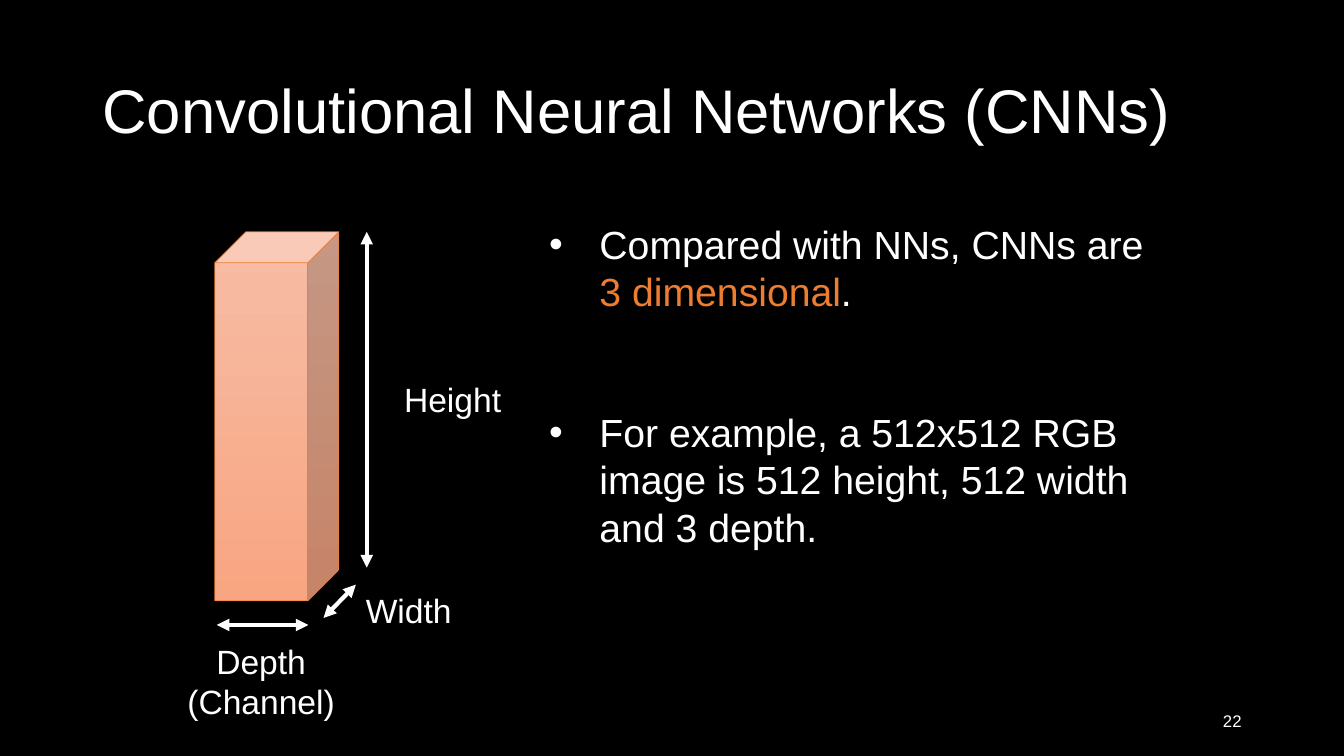
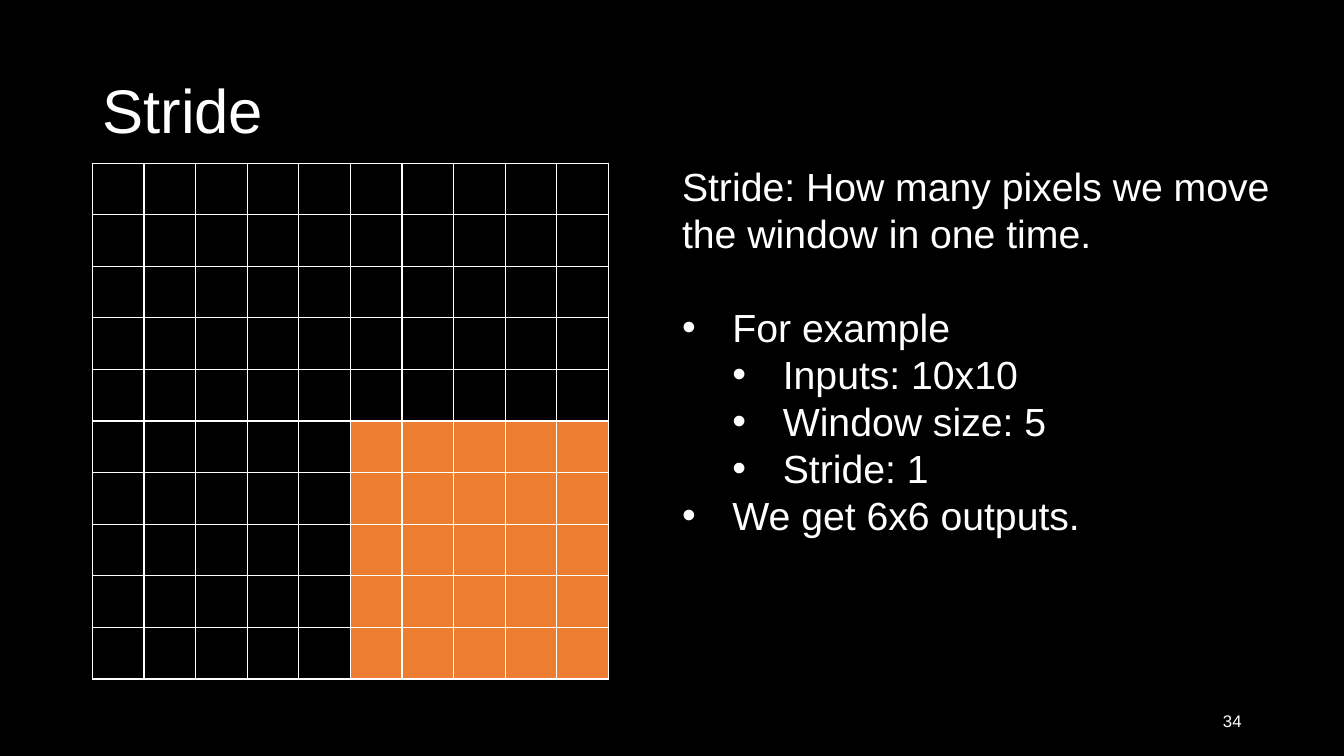
import lxml.etree
import pptx
import pptx.dml.color
import pptx.enum.shapes
import pptx.enum.text
import pptx.oxml.ns
import pptx.util

Pt = pptx.util.Pt
RGB = pptx.dml.color.RGBColor.from_string
ALIGN = pptx.enum.text.PP_ALIGN
MIDDLE = pptx.enum.text.MSO_ANCHOR.MIDDLE
qn = pptx.oxml.ns.qn
add = lxml.etree.SubElement

FONT = "Arial"
HUES = {
    "back": "000000",
    "text": "FFFFFF",
    "accent": "ED7D31",
    "top": "F7BDA5",
    "base": "F8A582",
}
INDENT = 36


def style(frame, size, align=ALIGN.LEFT):
    for par in frame.paragraphs:
        par.alignment = align
        par.line_spacing = Pt(size * 1.2)
        for run in par.runs:
            run.font.name = FONT
            run.font.size = Pt(size)
            run.font.color.rgb = RGB(HUES["text"])


def label(slide, text, box, size, align=ALIGN.LEFT):
    frame = slide.shapes.add_textbox(*map(Pt, box)).text_frame
    frame.word_wrap = False
    frame.text = text
    style(frame, size, align)
    return frame


# Shared look
deck = pptx.Presentation()
deck.slide_width, deck.slide_height = Pt(960), Pt(540)
master = deck.slide_master
master.background.fill.solid()
master.background.fill.fore_color.rgb = RGB(HUES["back"])

# Titles, page numbers and lists: each item is text, level, space before
pages = [
    ("Convolutional Neural Networks (CNNs)", "22", (385, 154, 467, 346), [
        ("Compared with NNs, CNNs are\v", 1, 0),
        ("For example, a 512x512 RGB image is 512 height, "
         "512 width and 3 depth.", 1, 67.2),
    ]),
    ("Stride", "34", (480, 112.3, 447, 279), [
        ("Stride: How many pixels we move\vthe window in one time.", 0, 0),
        ("For example", 1, 33.6),
        ("Inputs: 10x10", 2, 0),
        ("Window size: 5", 2, 0),
        ("Stride: 1", 2, 0),
        ("We get 6x6 outputs.", 1, 0),
    ]),
]
for name, number, box, items in pages:
    slide = deck.slides.add_slide(deck.slide_layouts[1])
    title, body = slide.placeholders
    title.left, title.top, title.width, title.height = map(
        Pt, (66, 28.8, 828, 104.4))
    title.text_frame.text = name
    title.text_frame.vertical_anchor = MIDDLE
    style(title.text_frame, 44)
    title.text_frame.paragraphs[0].line_spacing = 0.9

    body.left, body.top, body.width, body.height = map(Pt, box)
    frame = body.text_frame
    frame.auto_size = pptx.enum.text.MSO_AUTO_SIZE.NONE
    frame.text = "\n".join(text for text, level, gap in items)
    style(frame, 28)
    for par, (text, level, gap) in zip(frame.paragraphs, items):
        par.level = max(level - 1, 0)
        par.space_before = Pt(gap)
        props = par._p.get_or_add_pPr()
        props.set("marL", str(Pt(INDENT * level)))
        props.set("indent", str(Pt(-INDENT if level else 0)))
        if level:
            add(props, qn("a:buFont"), typeface=FONT)
            add(props, qn("a:buChar"), char="•")
        else:
            add(props, qn("a:buNone"))

    foot = label(slide, number, (678, 500.4, 216, 28.8), 12, ALIGN.RIGHT)
    foot.word_wrap = True
    foot.vertical_anchor = MIDDLE

first, second = deck.slides

# Accent words in the first list
frame = first.placeholders[1].text_frame
par = frame.paragraphs[0]
for text in ("3 dimensional", "."):
    par.add_run().text = text
style(frame, 28)
par.runs[1].font.color.rgb = RGB(HUES["accent"])

# Cube
cube = first.shapes.add_shape(
    pptx.enum.shapes.MSO_SHAPE.CUBE, *map(Pt, (153.4, 165.6, 88.6, 263.5)))
cube.shadow.inherit = False
cube.fill.gradient()
cube.fill.gradient_angle = 270
for stop, hue, place in zip(cube.fill.gradient_stops, ("top", "base"), (0, 1)):
    stop.color.rgb = RGB(HUES[hue])
    stop.position = place
cube.line.color.rgb = RGB(HUES["accent"])
cube.line.width = Pt(0.5)

# Dimension arrows and their labels
sizes = [
    ("Height", (262, 165.6, 262, 405.4), (281.5, 267, 85, 36), ALIGN.LEFT),
    ("Depth\v(Channel)", (154.8, 446.4, 220.3, 446.4),
     (126, 454.3, 121, 65.5), ALIGN.CENTER),
    ("Width", (231.1, 441.4, 254.2, 417.6), (254.2, 417.6, 76.3, 36),
     ALIGN.LEFT),
]
for text, ends, box, align in sizes:
    arrow = first.shapes.add_connector(
        pptx.enum.shapes.MSO_CONNECTOR.STRAIGHT, *map(Pt, ends))
    arrow.line.color.rgb = RGB(HUES["text"])
    arrow.line.width = Pt(3)
    line = arrow.line._get_or_add_ln()
    for tip in ("a:headEnd", "a:tailEnd"):
        add(line, qn(tip), type="triangle")
    add(arrow._element.spPr, qn("a:effectLst"))
    label(first, text, box, 24, align)

# Pixel grid with the window in its last corner
COUNT, WINDOW, SIDE = 10, 5, 36.86
grid = second.shapes.add_table(
    COUNT, COUNT, Pt(66), Pt(116.5), Pt(COUNT * SIDE), Pt(COUNT * SIDE)).table
grid.first_row = grid.horz_banding = False
for band in grid.columns:
    band.width = Pt(SIDE)
for band in grid.rows:
    band.height = Pt(SIDE)
for row in range(COUNT):
    for col in range(COUNT):
        cell = grid.cell(row, col)
        props = cell._tc.get_or_add_tcPr()
        for edge in ("a:lnL", "a:lnR", "a:lnT", "a:lnB"):
            line = add(props, qn(edge), w=str(Pt(1)))
            paint = add(line, qn("a:solidFill"))
            add(paint, qn("a:srgbClr"), val=HUES["text"])
        if min(row, col) >= COUNT - WINDOW:
            cell.fill.solid()
            cell.fill.fore_color.rgb = RGB(HUES["accent"])
        else:
            cell.fill.background()

deck.save("out.pptx")
